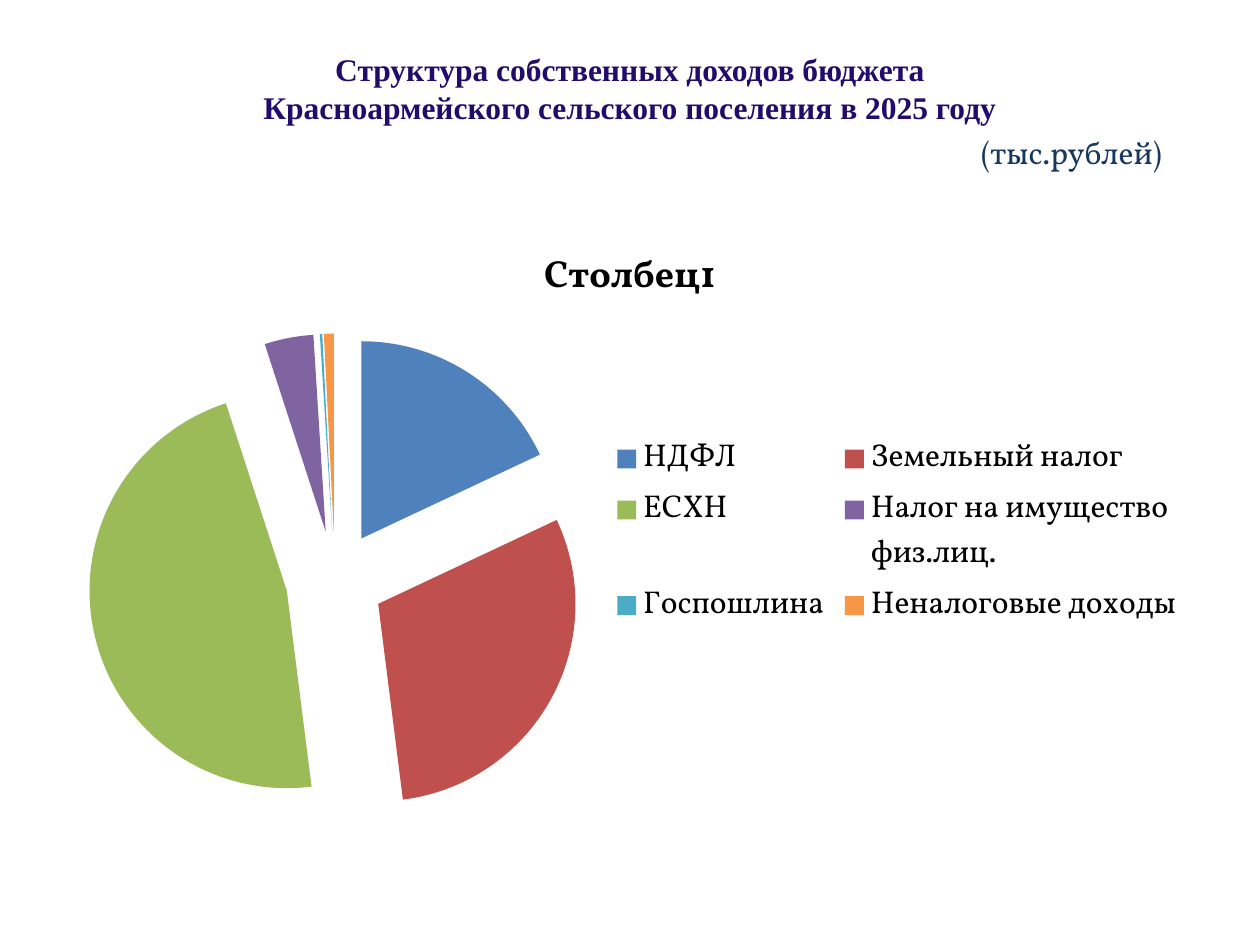
import pptx
import pptx.chart.data
import pptx.dml.color
import pptx.enum.chart
import pptx.enum.text
import pptx.oxml
import pptx.oxml.ns
import pptx.util

Pt = pptx.util.Pt
RGBColor = pptx.dml.color.RGBColor

INDIGO = RGBColor(0x22, 0x0B, 0x6B)
NAVY = RGBColor(0x17, 0x37, 0x5E)
BLACK = RGBColor(0x00, 0x00, 0x00)
BLUE = RGBColor(0x4F, 0x81, 0xBD)
RED = RGBColor(0xC0, 0x50, 0x4D)
GREEN = RGBColor(0x9B, 0xBB, 0x59)
PURPLE = RGBColor(0x80, 0x64, 0xA2)
TEAL = RGBColor(0x4B, 0xAC, 0xC6)
ORANGE = RGBColor(0xF7, 0x96, 0x46)

INCOME = [
    ("НДФЛ", 18, BLUE),
    ("Земельный налог", 30, RED),
    ("ЕСХН", 47, GREEN),
    ("Налог на имущество физ.лиц.", 4, PURPLE),
    ("Госпошлина", 0.2, TEAL),
    ("Неналоговые доходы", 0.8, ORANGE),
]
SERIES_NAME = "Столбец1"

presentation = pptx.Presentation()
presentation.slide_width = Pt(720)
presentation.slide_height = Pt(540)
slide = presentation.slides.add_slide(presentation.slide_layouts[5])

# Title with the unit of measure below it
title = slide.shapes.title
title.left, title.top, title.width, title.height = Pt(36), Pt(21), Pt(648), Pt(84.24)
title_frame = title.text_frame
title_frame.auto_size = pptx.enum.text.MSO_AUTO_SIZE.NONE
title_frame.vertical_anchor = pptx.enum.text.MSO_ANCHOR.MIDDLE
title_frame.margin_left = title_frame.margin_right = Pt(20)

heading = title_frame.paragraphs[0]
heading.text = "Структура собственных доходов бюджета\vКрасноармейского сельского поселения в 2025 году"
heading.alignment = pptx.enum.text.PP_ALIGN.CENTER
unit = title_frame.add_paragraph()
unit.text = "(тыс.рублей)"
unit.alignment = pptx.enum.text.PP_ALIGN.RIGHT
unit.space_before = Pt(4)
for paragraph, font_name, color, bold in [
    (heading, "Times New Roman", INDIGO, True),
    (unit, "Vollkorn", NAVY, False),
]:
    paragraph.font.name = font_name
    paragraph.font.size = Pt(18)
    paragraph.font.bold = bold
    paragraph.font.color.rgb = color

# Pie chart of income
chart_data = pptx.chart.data.CategoryChartData()
chart_data.categories = [name for name, share, color in INCOME]
chart_data.add_series(SERIES_NAME, [share for name, share, color in INCOME])
chart = slide.shapes.add_chart(
    pptx.enum.chart.XL_CHART_TYPE.PIE, Pt(36), Pt(126), Pt(648), Pt(356.4), chart_data
).chart
chart.font.name = "Vollkorn"
chart.font.size = Pt(18)
chart.font.color.rgb = BLACK

chart.has_title = True
chart_title = chart.chart_title.text_frame.paragraphs[0]
chart_title.text = SERIES_NAME
chart_title.font.name = "Vollkorn"
chart_title.font.size = Pt(21.6)
chart_title.font.bold = True
chart_title.font.color.rgb = BLACK

plot = chart.plots[0]
plot.vary_by_categories = True
series = plot.series[0]
for index, (name, share, color) in enumerate(INCOME):
    fill = series.points[index].format.fill
    fill.solid()
    fill.fore_color.rgb = color
explosion = pptx.oxml.parse_xml(f'<c:explosion {pptx.oxml.ns.nsdecls("c")} val="25"/>')
series._element.find(pptx.oxml.ns.qn("c:dPt")).addprevious(explosion)

chart.has_legend = True
legend = chart.legend
legend.position = pptx.enum.chart.XL_LEGEND_POSITION.RIGHT
legend.include_in_layout = False
legend.font.name = "Vollkorn"
legend.font.size = Pt(18)
legend.font.color.rgb = BLACK

presentation.save("out.pptx")
